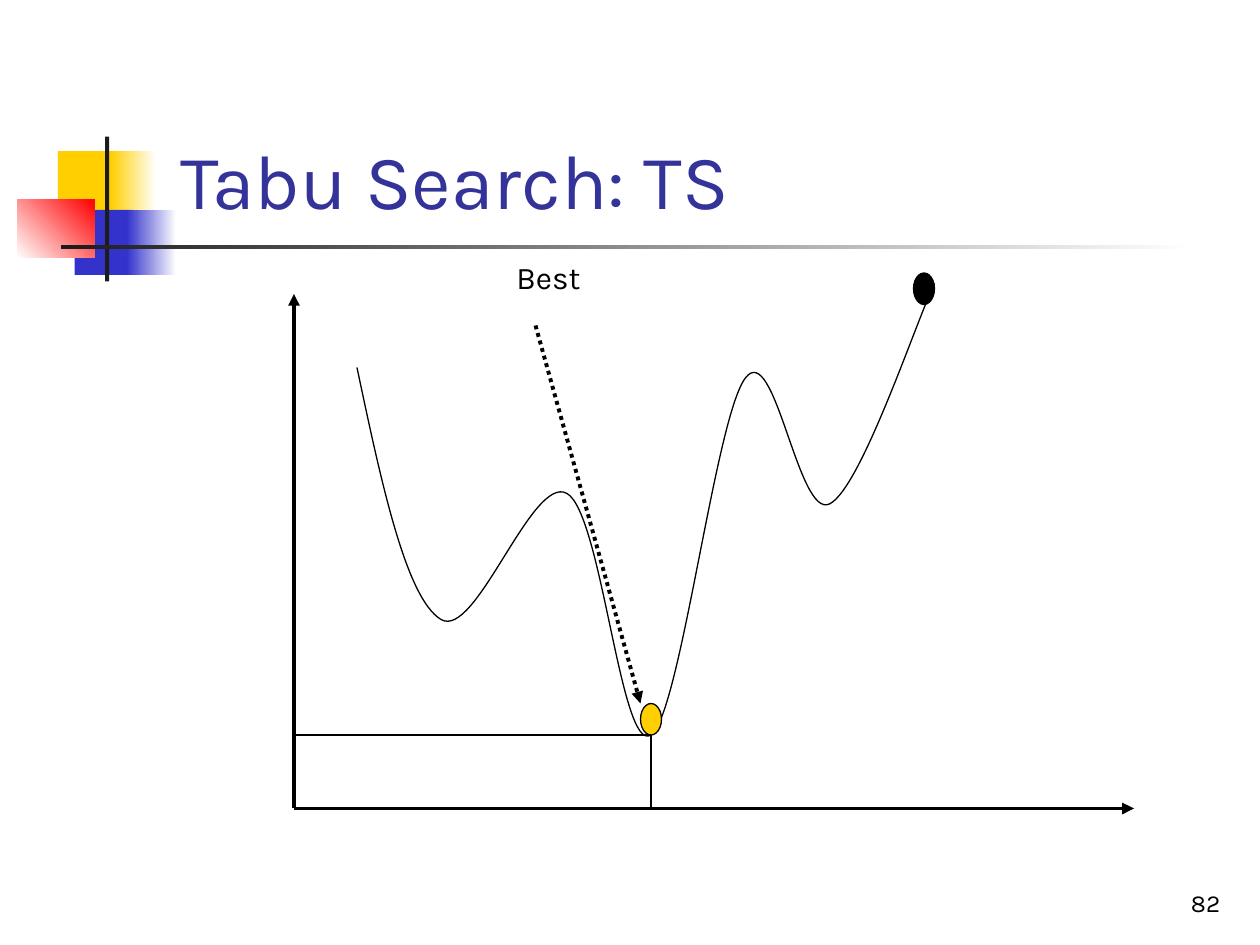
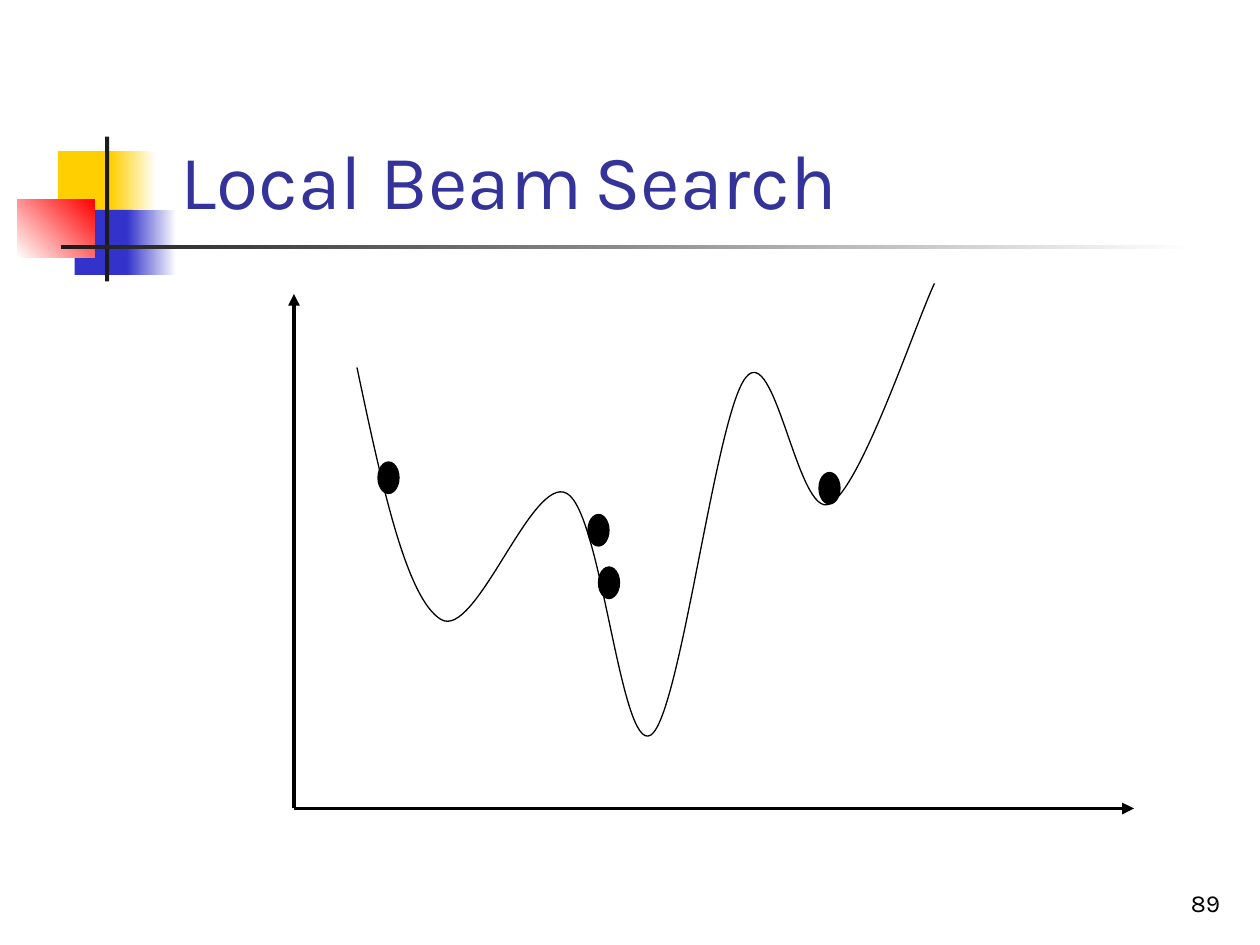
from lxml import etree
from pptx import Presentation
from pptx.dml.color import RGBColor
from pptx.enum.dml import MSO_LINE
from pptx.enum.shapes import MSO_CONNECTOR, MSO_SHAPE
from pptx.enum.text import MSO_ANCHOR, MSO_AUTO_SIZE, PP_ALIGN
from pptx.oxml.ns import qn
from pptx.util import Pt

RECTANGLE, ELLIPSE = MSO_SHAPE.RECTANGLE, MSO_SHAPE.OVAL
STRAIGHT = MSO_CONNECTOR.STRAIGHT
DOTTED = MSO_LINE.ROUND_DOT
TOP, BOTTOM = MSO_ANCHOR.TOP, MSO_ANCHOR.BOTTOM
LEFT, RIGHT = PP_ALIGN.LEFT, PP_ALIGN.RIGHT

PX = 3048  # EMU per px, 300 px to the inch
TITLE_ONLY = 5
FONT = "Karla"
TITLE_SIZE = 44

BLACK = RGBColor(0x00, 0x00, 0x00)
WHITE = RGBColor(0xFF, 0xFF, 0xFF)
CHARCOAL = RGBColor(0x1C, 0x1C, 0x1C)
YELLOW = RGBColor(0xFF, 0xCF, 0x01)
BLUE = RGBColor(0x33, 0x33, 0xCC)
RED = RGBColor(0xFF, 0x00, 0x00)
INDIGO = RGBColor(0x33, 0x33, 0x99)

# Title ornament: box, colour, fade colour, angle of the fade
ORNAMENT = [
    ((138, 360, 144, 156), YELLOW, None, 0),
    ((264, 360, 108, 156), YELLOW, WHITE, 0),
    ((178, 500, 138, 155), BLUE, None, 0),
    ((302, 500, 118, 155), BLUE, WHITE, 0),
    ((41, 474, 184, 140), WHITE, RED, 45),
    ((250, 325, 10, 345), CHARCOAL, None, 0),
    ((145, 584, 2700, 10), CHARCOAL, WHITE, 0),
]
ORNAMENT_FIRST_ID = 100

# Chart axes and the cost curve: a start, then Bezier control points
ORIGIN, Y_END, X_END = (700, 1925), (700, 700), (2700, 1925)
CURVE_START = (850, 875)
CURVE_POINTS = [
    (908, 1150), (967, 1425), (1050, 1475),
    (1133, 1525), (1267, 1128), (1350, 1175),
    (1433, 1222), (1478, 1797), (1550, 1750),
    (1620, 1703), (1703, 993), (1775, 900),
    (1845, 807), (1900, 1236), (1975, 1200),
    (2050, 1164), (2183, 761), (2225, 675),
]
DOT_SIZE = (50, 75)


def emu(lengths):
    return [length * PX for length in lengths]


def write_text(frame, runs, size=18, color=BLACK, align=LEFT, anchor=TOP):
    """Fill a frame with runs; a run is a string or a (string, size) pair."""
    frame.word_wrap = True
    frame.auto_size = MSO_AUTO_SIZE.NONE
    frame.vertical_anchor = anchor
    paragraph = frame.paragraphs[0]
    paragraph.alignment = align
    for part in runs:
        words, run_size = (part, size) if isinstance(part, str) else part
        run = paragraph.add_run()
        run.text = words
        run.font.name = FONT
        run.font.size = Pt(run_size)
        run.font.color.rgb = color


class SearchDeck:
    def __init__(self):
        self.presentation = Presentation()
        self.presentation.slide_width, self.presentation.slide_height = emu((3000, 2250))
        self.layout = self.presentation.slide_layouts[TITLE_ONLY]
        self.slide = None
        self.has_ornament = False

    def new_slide(self, title_runs, number):
        self.slide = self.presentation.slides.add_slide(self.layout)
        if not self.has_ornament:
            self.layout_ornament()
        self.label((2310, 2050, 625, 150), str(number), size=14, align=RIGHT, anchor=BOTTOM)
        self.title(title_runs)

    def layout_ornament(self):
        """Draw the ornament once and hand it to the layout, behind its placeholders."""
        layout_tree = self.layout.shapes._spTree
        for index, (box, color, fade, angle) in enumerate(ORNAMENT):
            piece = self.shape(RECTANGLE, box, color, fade=fade, angle=angle)._element
            piece.nvSpPr.cNvPr.set("id", str(ORNAMENT_FIRST_ID + index))
            layout_tree.insert(2 + index, piece)
        self.has_ornament = True

    def title(self, runs):
        title = self.slide.shapes.title
        title.left, title.top, title.width, title.height = emu((400, 281, 2556, 269))
        write_text(title.text_frame, runs, size=TITLE_SIZE, color=INDIGO, anchor=BOTTOM)

    def label(self, box, words, **style):
        textbox = self.slide.shapes.add_textbox(*emu(box))
        write_text(textbox.text_frame, [words], **style)

    def shape(self, kind, box, color, fade=None, angle=0, outline=None):
        shape = self.slide.shapes.add_shape(kind, *emu(box))
        shape.shadow.inherit = False
        if fade is None:
            shape.fill.solid()
            shape.fill.fore_color.rgb = color
        else:
            shape.fill.gradient()
            shape.fill.gradient_angle = angle
            for stop, stop_color in zip(shape.fill.gradient_stops, (color, fade)):
                stop.color.rgb = stop_color
        if outline is None:
            shape.line.fill.background()
        else:
            self.stroke(shape.line, outline)
        return shape

    def stroke(self, line, width, color=BLACK):
        line.color.rgb = color
        line.width = Pt(width)

    def dot(self, left, top, color=BLACK):
        self.shape(ELLIPSE, (left, top, *DOT_SIZE), color, outline=0.75)

    def line(self, start, end, width=0.75, dash=None, arrow=False):
        connector = self.slide.shapes.add_connector(STRAIGHT, *emu(start + end))
        self.stroke(connector.line, width)
        if dash is not None:
            connector.line.dash_style = dash
        properties = connector._element.spPr
        if arrow:
            etree.SubElement(properties.find(qn("a:ln")), qn("a:tailEnd"), type="triangle")
        etree.SubElement(properties, qn("a:effectLst"))

    def curve(self, start, control_points):
        """Draw joined cubic Bezier pieces, three control points to each."""
        builder = self.slide.shapes.build_freeform(*start, scale=PX)
        builder.add_line_segments(control_points, close=False)
        curve = builder.convert_to_shape()
        curve.shadow.inherit = False
        curve.fill.background()
        self.stroke(curve.line, 0.75)
        outline = next(curve._element.iter(qn("a:path")))
        segments = outline.findall(qn("a:lnTo"))
        for first in range(0, len(segments), 3):
            bezier = etree.SubElement(outline, qn("a:cubicBezTo"))
            for segment in segments[first:first + 3]:
                bezier.append(segment[0])
                outline.remove(segment)

    def cost_chart(self):
        for axis_end in (Y_END, X_END):
            self.line(ORIGIN, axis_end, width=2.25, arrow=True)
        self.curve(CURVE_START, CURVE_POINTS)


def main():
    deck = SearchDeck()

    # Tabu search: start point, best point and its guides
    deck.new_slide(["Tabu Search: TS"], 82)
    deck.cost_chart()
    deck.label((1200, 600, 350, 120), "Best")
    deck.line((1275, 775), (1525, 1675), width=2.25, dash=DOTTED, arrow=True)
    deck.dot(2175, 650)
    deck.dot(1525, 1675, YELLOW)
    minimum = (1550, 1750)
    for foot in ((1550, 1925), (700, 1750)):
        deck.line(minimum, foot)

    # Local beam search: several states at once
    deck.new_slide(["Local Beam", (" ", 28), "Search"], 89)
    deck.cost_chart()
    for state in ((1400, 1225), (900, 1100), (1425, 1350), (1950, 1125)):
        deck.dot(*state)

    deck.presentation.save("out.pptx")


if __name__ == "__main__":
    main()
